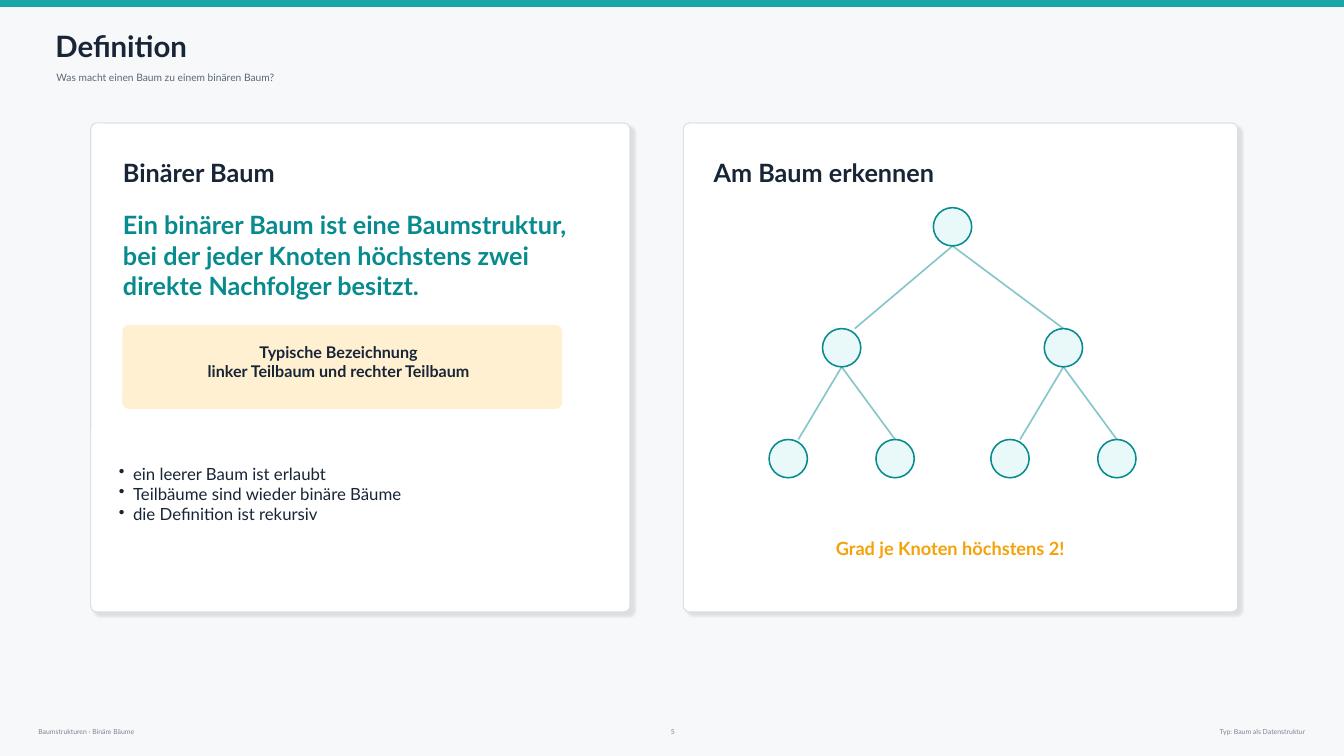
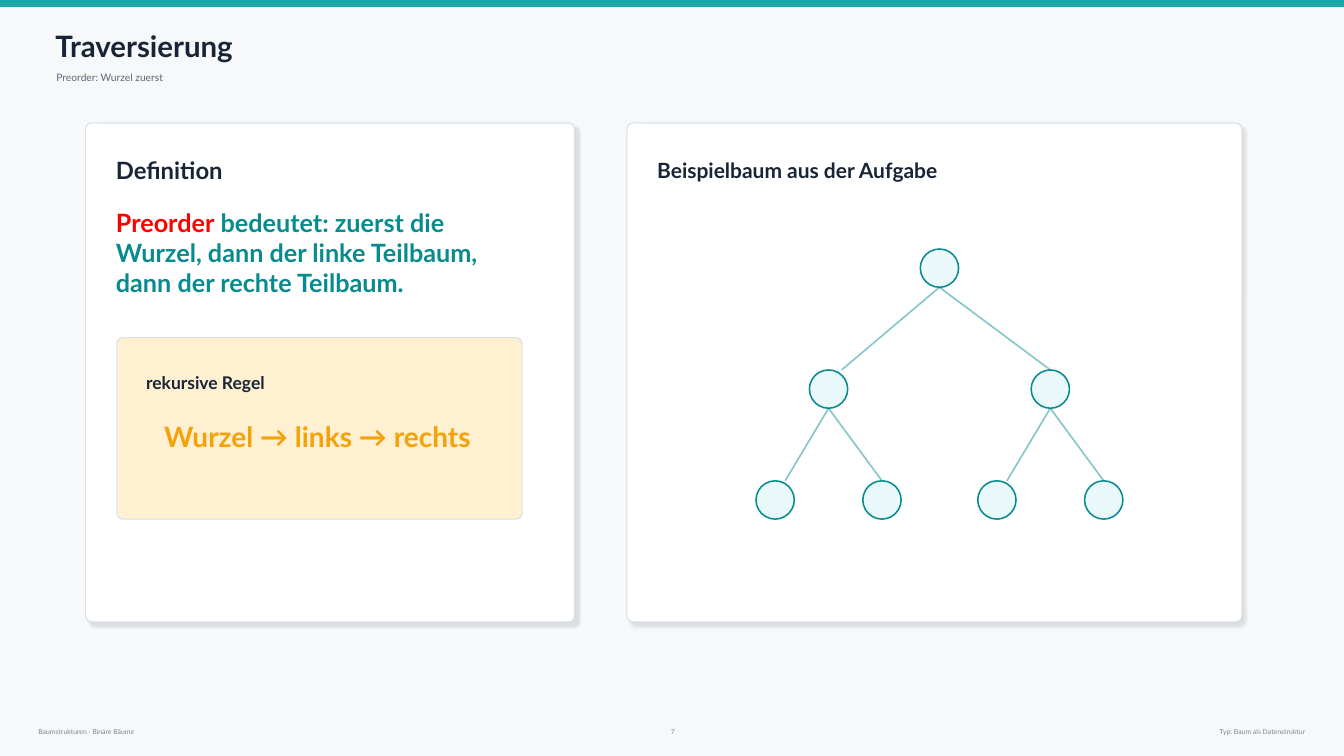
from dataclasses import dataclass
from lxml.etree import SubElement
from pptx import Presentation
from pptx.dml.color import RGBColor
from pptx.enum.shapes import MSO_CONNECTOR, MSO_SHAPE
from pptx.enum.text import MSO_ANCHOR, PP_ALIGN
from pptx.oxml.ns import qn
from pptx.util import Pt


@dataclass(frozen=True)
class Theme:
    # Colours
    back: str = "F6F8FA"
    bar: str = "19A7A8"
    ink: str = "182536"
    soft: str = "5B6775"
    faint: str = "7B8794"
    teal: str = "078B8E"
    amber: str = "F5A20A"
    red: str = "FF0000"
    white: str = "FFFFFF"
    rim: str = "D8E0E8"
    cream: str = "FFF0D2"
    mint: str = "E9F9F9"
    edge: str = "88C7C9"
    # Type
    face: str = "Lato"
    title: float = 21
    sub: float = 7.3
    foot: float = 4.9
    rule: float = 20
    lead: float = 18
    head: float = 17
    small: float = 15
    hint: float = 13
    label: float = 12.5
    body: float = 12
    note: float = 11.5
    # Corner radius
    round: float = 4.3


T = Theme()
WIDE, HIGH = 960, 540


def rgb(code):
    return RGBColor.from_string(code)


def inside(box, x, y, w, h):
    """Turn a place within a box into a place on the slide."""
    return box[0] + x, box[1] + y, w, h


def style(font, size, color, bold):
    font.name, font.size, font.bold = T.face, Pt(size), bold
    font.color.rgb = rgb(color)


def bullet(para, gap=10.08):
    props = para._p.get_or_add_pPr()
    props.set("marL", str(Pt(gap)))
    props.set("indent", str(-Pt(gap)))
    SubElement(props, qn("a:buChar")).set("char", "•")


def write(slide, box, lines, size, color=T.ink, bold=False,
          align=PP_ALIGN.LEFT, dots=False):
    """Each line is a string, or a list of (text, colour) runs."""
    frame = slide.shapes.add_textbox(*map(Pt, box)).text_frame
    frame.word_wrap = True
    frame.vertical_anchor = MSO_ANCHOR.MIDDLE
    frame.margin_left = frame.margin_right = 0
    frame.margin_top = frame.margin_bottom = 0
    for i, line in enumerate(lines):
        para = frame.add_paragraph() if i else frame.paragraphs[0]
        para.alignment = align
        if dots:
            bullet(para)
        if isinstance(line, str):
            para.add_run().text = line
            style(para.font, size, color, bold)
            continue
        for text, tint in line:
            run = para.add_run()
            run.text = text
            style(run.font, size, tint, bold)


def draw(slide, kind, box, fill, line, width):
    shape = slide.shapes.add_shape(kind, *map(Pt, box))
    shape.shadow.inherit = False
    shape.fill.solid()
    shape.fill.fore_color.rgb = rgb(fill)
    shape.line.color.rgb = rgb(line)
    shape.line.width = Pt(width)
    return shape


def panel(slide, box, fill, line, width):
    shape = draw(slide, MSO_SHAPE.ROUNDED_RECTANGLE, box, fill, line, width)
    shape.adjustments[0] = T.round / min(box[2:])
    return shape


def card(slide, box):
    shape = panel(slide, box, T.white, T.rim, 0.8)
    effects = shape._element.spPr.find(qn("a:effectLst"))
    shade = SubElement(effects, qn("a:outerShdw"), blurRad=str(Pt(1.2)),
                       dist=str(Pt(4)), dir="2700000", algn="tl",
                       rotWithShape="0")
    tint = SubElement(shade, qn("a:srgbClr"), val="000000")
    SubElement(tint, qn("a:alpha"), val="10000")


def link(slide, *ends):
    line = slide.shapes.add_connector(MSO_CONNECTOR.STRAIGHT, *map(Pt, ends))
    line.line.color.rgb = rgb(T.edge)
    line.line.width = Pt(1.2)
    SubElement(line._element.spPr, qn("a:effectLst"))


def tree(slide, mid, top):
    """Binary tree of three levels, its root centred on mid."""
    size = 27.36
    row, nodes = [mid], [(mid, top)]
    # Per level: distance down, half spread, inset of the left edge
    for drop, half, inset in ((86.4, 79.2, 9.36), (79.2, 38.16, 7.2)):
        for x in row:
            link(slide, x, top + size, x - half + inset, top + drop)
            link(slide, x, top + size, x + half, top + drop)
        row = [x + side * half for x in row for side in (-1, 1)]
        top += drop
        nodes += [(x, top) for x in row]
    for x, y in nodes:
        draw(slide, MSO_SHAPE.OVAL, (x - size / 2, y, size, size),
             T.mint, T.teal, 1.1)


def base(deck, title, sub, page):
    """Slide with the top bar, title, subtitle and footer."""
    slide = deck.slides.add_slide(deck.slide_layouts[6])
    draw(slide, MSO_SHAPE.RECTANGLE, (0, 0, WIDE, 4.32), T.bar, T.bar, 1)
    write(slide, (39.6, 20.16, 633.6, 24.48), [title], T.title, bold=True)
    write(slide, (40.32, 47.52, 633.6, 15.84), [sub], T.sub, T.soft)
    for x, w, text, align in (
            (27.36, 216, "Baumstrukturen · Binäre Bäume", PP_ALIGN.LEFT),
            (813.6, 118.8, "Typ: Baum als Datenstruktur", PP_ALIGN.RIGHT),
            (471.6, 18, str(page), PP_ALIGN.CENTER)):
        write(slide, (x, 516.96, w, 11.52), [text], T.foot, T.faint,
              align=align)
    return slide


def meaning(slide, box):
    card(slide, box)
    write(slide, inside(box, 23.04, 23.76, 216, 23.04), ["Binärer Baum"],
          T.lead, bold=True)
    write(slide, inside(box, 23.04, 61.92, 334.8, 64.8),
          ["Ein binärer Baum ist eine Baumstruktur, bei der jeder Knoten "
           "höchstens zwei direkte Nachfolger besitzt."],
          T.lead, T.teal, True)
    # Naming note
    note = inside(box, 23.04, 144.72, 313.2, 59.04)
    panel(slide, note, T.cream, T.cream, 1)
    write(slide, inside(note, 17.28, 12.96, 273.6, 25.92),
          ["Typische Bezeichnung", "linker Teilbaum und rechter Teilbaum"],
          T.note, bold=True, align=PP_ALIGN.CENTER)
    # Remarks
    write(slide, inside(box, 20.16, 232.56, 334.8, 64.8),
          ["ein leerer Baum ist erlaubt",
           "Teilbäume sind wieder binäre Bäume",
           "die Definition ist rekursiv"], T.body, dots=True)


def sample(slide, box, title, size, high, mid, top):
    """Card with a heading and a tree."""
    card(slide, box)
    write(slide, inside(box, 21.6, 23.76, 273.6, high), [title], size,
          bold=True)
    tree(slide, box[0] + mid, box[1] + top)


def order(slide, box):
    card(slide, box)
    write(slide, inside(box, 21.6, 23.76, 144, 20.16), ["Definition"],
          T.head, bold=True)
    write(slide, inside(box, 21.6, 61.92, 298.8, 61.2),
          [[("Preorder", T.red),
            (" bedeutet: zuerst die Wurzel, dann der linke Teilbaum, "
             "dann der rechte Teilbaum.", T.teal)]], T.lead, bold=True)
    # Recursive rule
    rule = inside(box, 22.32, 153.36, 289.44, 129.6)
    panel(slide, rule, T.cream, T.rim, 0.8)
    write(slide, inside(rule, 20.88, 23.76, 244.8, 15.84),
          ["rekursive Regel"], T.label, bold=True)
    write(slide, inside(rule, 20.88, 58.32, 244.8, 24.48),
          ["Wurzel → links → rechts"], T.rule, T.amber, True,
          PP_ALIGN.CENTER)


def main():
    deck = Presentation()
    deck.slide_width, deck.slide_height = Pt(WIDE), Pt(HIGH)
    back = deck.slide_master.background.fill
    back.solid()
    back.fore_color.rgb = rgb(T.back)

    # Definition
    slide = base(deck, "Definition",
                 "Was macht einen Baum zu einem binären Baum?", 5)
    meaning(slide, (64.8, 87.84, 385.2, 349.2))
    right = (488.16, 87.84, 396, 349.2)
    sample(slide, right, "Am Baum erkennen", T.lead, 23.04, 192.24, 60.48)
    write(slide, inside(right, 95.04, 295.2, 190.8, 17.28),
          ["Grad je Knoten höchstens 2!"], T.hint, T.amber, True,
          PP_ALIGN.CENTER)

    # Traversal
    slide = base(deck, "Traversierung", "Preorder: Wurzel zuerst", 7)
    order(slide, (61.2, 87.84, 349.2, 356.4))
    sample(slide, (447.84, 87.84, 439.2, 356.4),
           "Beispielbaum aus der Aufgabe", T.small, 20.16, 223.2, 90)

    deck.save("out.pptx")


if __name__ == "__main__":
    main()
